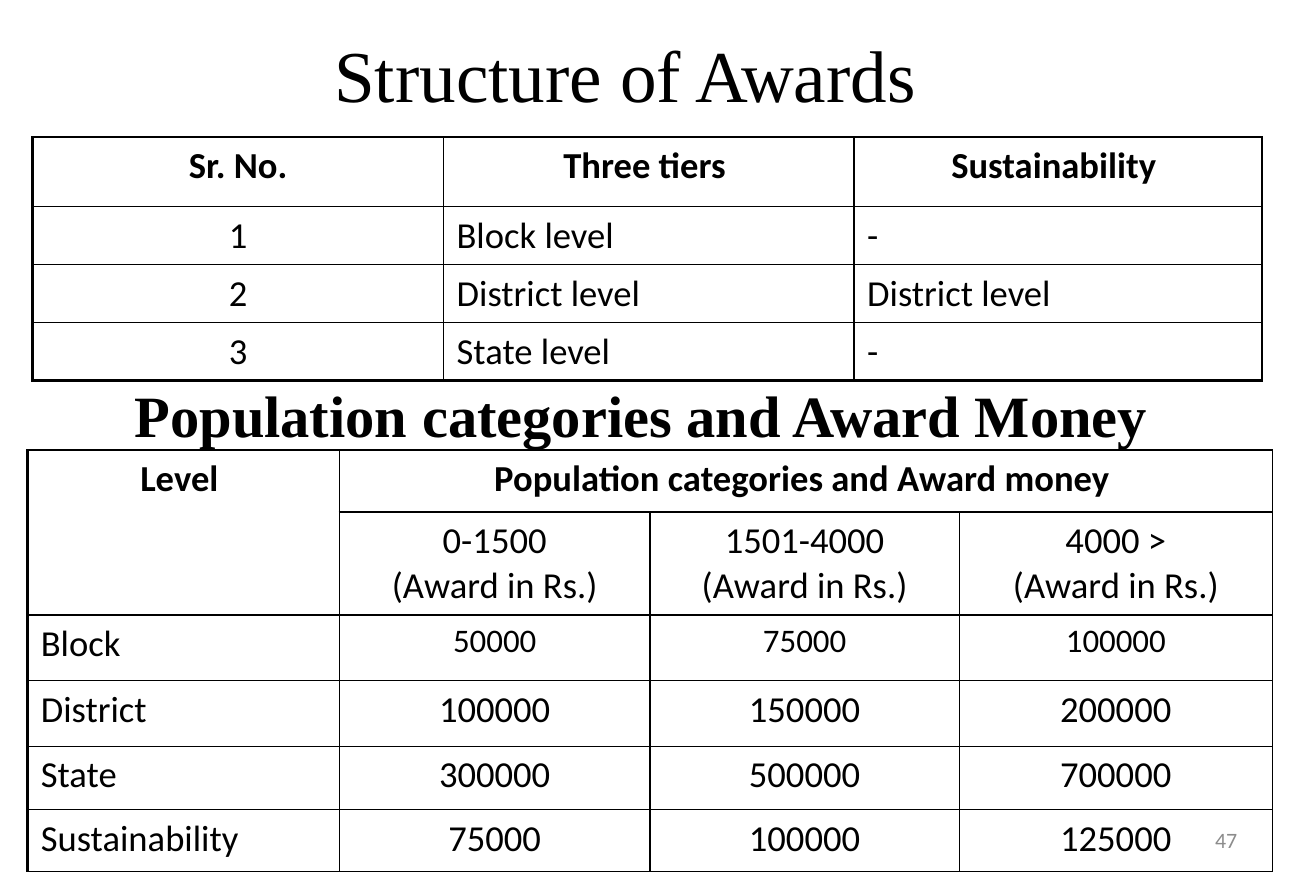
from lxml import etree
from pptx import Presentation
from pptx.dml.color import RGBColor
from pptx.enum import text
from pptx.oxml.ns import qn
from pptx.util import Cm, Inches, Pt

# Content
TITLE = "Structure of Awards"
SUBTITLE = "Population categories and Award Money"
PAGE_NUMBER = "47"
TIERS = [
    ["Sr. No.", "Three tiers ", "Sustainability "],
    ["1", "Block level ", "-"],
    ["2", "District level ", "District level"],
    ["3", "State level ", "-"],
]
UNIT = "(Award in Rs.)"
AWARDS = [
    ["Level ", "Population categories and Award money ", "", ""],
    ["", f"0-1500\n{UNIT}", f"1501-4000\n{UNIT}", f"4000 >\n{UNIT}"],
    ["Block ", "50000", "75000", "100000"],
    ["District ", "100000", "150000", "200000"],
    ["State ", "300000", "500000", "700000"],
    ["Sustainability ", "75000", "100000", "125000"],
]

COLORS = {"ink": "000000", "muted": "8C8C8C"}
SERIF, SANS = "Times New Roman", "Calibri"
ALIGN = text.PP_ALIGN
INDENT = Inches(0.38)


def add_run(paragraph, words, size, font, color="ink", bold=False):
    run = paragraph.add_run()
    run.text = words
    run.font.size = Pt(size)
    run.font.name = font
    run.font.bold = bold
    run.font.color.rgb = RGBColor.from_string(COLORS[color])


def set_hanging_indent(paragraph):
    properties = paragraph._p.get_or_add_pPr()
    properties.set("marL", str(INDENT))
    properties.set("indent", str(-INDENT))


def set_borders(cell, widths):
    properties = cell._tc.get_or_add_tcPr()
    for position, (side, width) in enumerate(widths.items()):
        line = etree.Element(qn(f"a:ln{side}"), w=str(Pt(width)))
        fill = etree.SubElement(line, qn("a:solidFill"))
        etree.SubElement(fill, qn("a:srgbClr"), val=COLORS["ink"])
        properties.insert(position, line)


def add_grid(slide, rows, left, top, widths, heights, justified, heavy_bottom=False,
             small_row=None):
    """Add a bordered table; the columns in justified are not centred below the header."""
    table = slide.shapes.add_table(
        len(rows), len(widths), Inches(left), Inches(top),
        Inches(sum(widths)), Inches(sum(heights))).table
    table.first_row = table.horz_banding = False
    for column, width in zip(table.columns, widths):
        column.width = Inches(width)
    for row, height in zip(table.rows, heights):
        row.height = Inches(height)

    for r, row in enumerate(rows):
        for c, words in enumerate(row):
            cell = table.cell(r, c)
            cell.fill.background()
            last = heavy_bottom and r == len(rows) - 1
            set_borders(cell, {"L": 2 if c == 0 else 1, "R": 1, "T": 1,
                               "B": 2 if last else 1})
            small = r == small_row and c > 0
            for n, line in enumerate(words.split("\n") if words else []):
                frame = cell.text_frame
                paragraph = frame.add_paragraph() if n else frame.paragraphs[0]
                body = r > 0 and c in justified
                paragraph.alignment = ALIGN.JUSTIFY if body else ALIGN.CENTER
                if not small:
                    set_hanging_indent(paragraph)
                add_run(paragraph, line, 18 if small else 20, SANS, bold=r == 0)
    return table


def add_label(slide, left, top, width, height):
    frame = slide.shapes.add_textbox(
        Inches(left), Inches(top), Inches(width), Inches(height)).text_frame
    frame.word_wrap = True
    return frame


def main():
    deck = Presentation()
    deck.slide_width, deck.slide_height = Inches(10), Cm(17)
    # The default template labels its size 4:3, which no longer holds
    deck.element.find(qn("p:sldSz")).attrib.pop("type", None)
    slide = deck.slides.add_slide(deck.slide_layouts[5])

    # Title
    title = slide.shapes.title
    title.left, title.top = Inches(0.25), Inches(0.15)
    title.width, title.height = Inches(9), Inches(0.82)
    title.text_frame.vertical_anchor = text.MSO_ANCHOR.MIDDLE
    heading = title.text_frame.paragraphs[0]
    heading.alignment = ALIGN.CENTER
    add_run(heading, TITLE, 40, SERIF)

    # Award money by population, with a two-row header
    awards = add_grid(slide, AWARDS, 0.21, 3.42, [2.37, 2.36, 2.35, 2.38],
                      [0.47, 0.78, 0.5, 0.5, 0.48, 0.47], justified={0}, small_row=2)
    awards.cell(0, 0).merge(awards.cell(1, 0))
    awards.cell(0, 1).merge(awards.cell(0, 3))

    # Award tiers
    add_grid(slide, TIERS, 0.25, 1.04, [3.12, 3.12, 3.1],
             [0.53] + [0.44] * 3, justified={1, 2}, heavy_bottom=True)

    # Subtitle between the tables
    subtitle = add_label(slide, 0.5, 2.83, 8.75, 0.52).paragraphs[0]
    subtitle.alignment = ALIGN.CENTER
    subtitle.space_before = Pt(4)
    set_hanging_indent(subtitle)
    add_run(subtitle, SUBTITLE, 32, SERIF, bold=True)

    # Page number
    footer = add_label(slide, 7.17, 6.2, 2.33, 0.36)
    footer.vertical_anchor = text.MSO_ANCHOR.MIDDLE
    footer.paragraphs[0].alignment = ALIGN.RIGHT
    add_run(footer.paragraphs[0], PAGE_NUMBER, 12, SANS, color="muted")

    deck.save("out.pptx")


if __name__ == "__main__":
    main()
